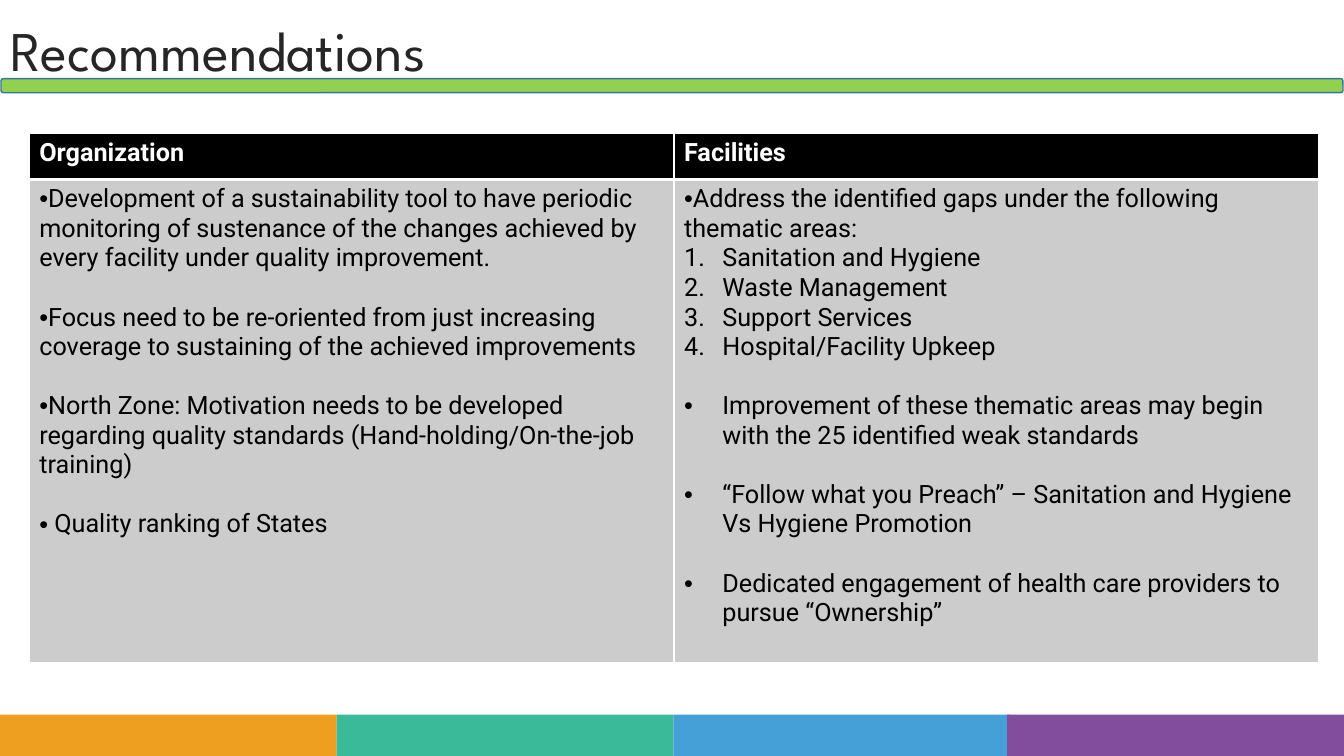
from lxml.etree import SubElement
from pptx import Presentation
from pptx.dml.color import RGBColor
from pptx.enum.shapes import MSO_SHAPE
from pptx.enum.text import MSO_ANCHOR, PP_ALIGN
from pptx.oxml import parse_xml
from pptx.oxml.ns import nsdecls, qn
from pptx.util import Inches, Pt

# Content: each point is (style, text, starts a new block)
TITLE = "Recommendations"
HEADINGS = ["Organization", "Facilities"]
POINTS = [
    [
        ("inline", "Development of a sustainability tool to have periodic monitoring of sustenance "
                   "of the changes achieved by every facility under quality improvement.", False),
        ("inline", "Focus need to be re-oriented from just increasing coverage to sustaining "
                   "of the achieved improvements", True),
        ("inline", "North Zone: Motivation needs to be developed regarding quality standards "
                   "(Hand-holding/On-the-job training)", True),
        ("inline", " Quality ranking of States", True),
    ],
    [
        ("inline", "Address the identified gaps under the following thematic areas:", False),
        ("number", "Sanitation and Hygiene", False),
        ("number", "Waste Management", False),
        ("number", "Support Services", False),
        ("number", "Hospital/Facility Upkeep", False),
        ("bullet", "Improvement of these thematic areas may begin with the 25 identified "
                   "weak standards", True),
        ("bullet", "“Follow what you Preach” – Sanitation and Hygiene Vs Hygiene Promotion", True),
        ("bullet", "Dedicated engagement of health care providers to pursue “Ownership”", True),
    ],
]

COLORS = {
    "title": "262626", "rule": "92D050", "rule_line": "3476A0",
    "header": "000000", "body": "CCCCCC", "white": "FFFFFF", "black": "000000",
}
FOOTER_COLORS = ["EE9F20", "3ABA99", "46A0D8", "824D9D"]
SLIDE_W, SLIDE_H = 13.33, 7.5
BAND_W, BAND_H = 3.34, 0.41
HANGING = 0.38
BLOCK_GAP = 21.1  # one line of 18 pt text


def write(paragraph, text, size=18, font="Roboto", color=COLORS["black"], bold=False,
          style=None, gap=0, line_spacing=None):
    paragraph.alignment = PP_ALIGN.LEFT
    paragraph.space_before = Pt(gap)
    if line_spacing:
        paragraph.line_spacing = line_spacing
    run = paragraph.add_run()
    run.text = text
    run.font.size, run.font.name, run.font.bold = Pt(size), font, bold
    run.font.color.rgb = RGBColor.from_string(color)
    if style:
        props = paragraph._p.get_or_add_pPr()
        indent = 0 if style == "inline" else Inches(HANGING)
        props.set("marL", str(indent))
        props.set("indent", str(-indent))
        if style == "number":
            SubElement(props, qn("a:buFont"), typeface="+mj-lt")
            SubElement(props, qn("a:buAutoNum"), type="arabicPeriod")
        else:
            SubElement(props, qn("a:buFont"), typeface="Arial")
            SubElement(props, qn("a:buChar"), char="•")


def add_bar(kind, left, top, width, height, fill, line=None):
    bar = slide.shapes.add_shape(kind, Inches(left), Inches(top), Inches(width), Inches(height))
    bar.shadow.inherit = False
    bar.fill.solid()
    bar.fill.fore_color.rgb = RGBColor.from_string(fill)
    if line:
        bar.line.color.rgb = RGBColor.from_string(line)
        bar.line.width = Pt(1)
    else:
        bar.line.fill.background()


def format_cell(cell, fill, bottom_width):
    cell.fill.solid()
    cell.fill.fore_color.rgb = RGBColor.from_string(fill)
    widths = {"lnL": 1, "lnR": 1, "lnT": 1, "lnB": bottom_width}
    for position, (side, width) in enumerate(widths.items()):
        cell._tc.get_or_add_tcPr().insert(position, parse_xml(
            f'<a:{side} {nsdecls("a")} w="{Pt(width)}"><a:solidFill>'
            f'<a:srgbClr val="{COLORS["white"]}"/></a:solidFill></a:{side}>'))


prs = Presentation()
prs.slide_width, prs.slide_height = Inches(SLIDE_W), Inches(SLIDE_H)
slide = prs.slides.add_slide(prs.slide_layouts[5])

# Footer bands, the last one flush with the right edge
for i, band_color in enumerate(FOOTER_COLORS):
    add_bar(MSO_SHAPE.RECTANGLE, min(i * BAND_W, SLIDE_W - BAND_W), SLIDE_H - BAND_H,
            BAND_W, BAND_H, band_color)

# Title and the rule under it
add_bar(MSO_SHAPE.ROUNDED_RECTANGLE, 0.01, 0.78, 13.31, 0.14, COLORS["rule"], COLORS["rule_line"])
title = slide.shapes.title
title.left, title.top, title.width, title.height = Inches(0), Inches(0), Inches(7.58), Inches(1.06)
title.text_frame.vertical_anchor = MSO_ANCHOR.MIDDLE
write(title.text_frame.paragraphs[0], TITLE, size=40, font="League Spartan",
      color=COLORS["title"], line_spacing=0.9)

# Recommendations table
table = slide.shapes.add_table(2, 2, Inches(0.29), Inches(1.32), Inches(12.79), Inches(5.25)).table
table.horz_banding = False
table.rows[0].height, table.rows[1].height = Inches(0.46), Inches(4.79)
for col, (heading, points) in enumerate(zip(HEADINGS, POINTS)):
    header, body = table.cell(0, col), table.cell(1, col)
    format_cell(header, COLORS["header"], 3)
    format_cell(body, COLORS["body"], 1)
    write(header.text_frame.paragraphs[0], heading, color=COLORS["white"], bold=True)
    for n, (style, text, new_block) in enumerate(points):
        frame = body.text_frame
        paragraph = frame.add_paragraph() if n else frame.paragraphs[0]
        write(paragraph, text, style=style, gap=BLOCK_GAP if new_block else 0)

prs.save("out.pptx")
